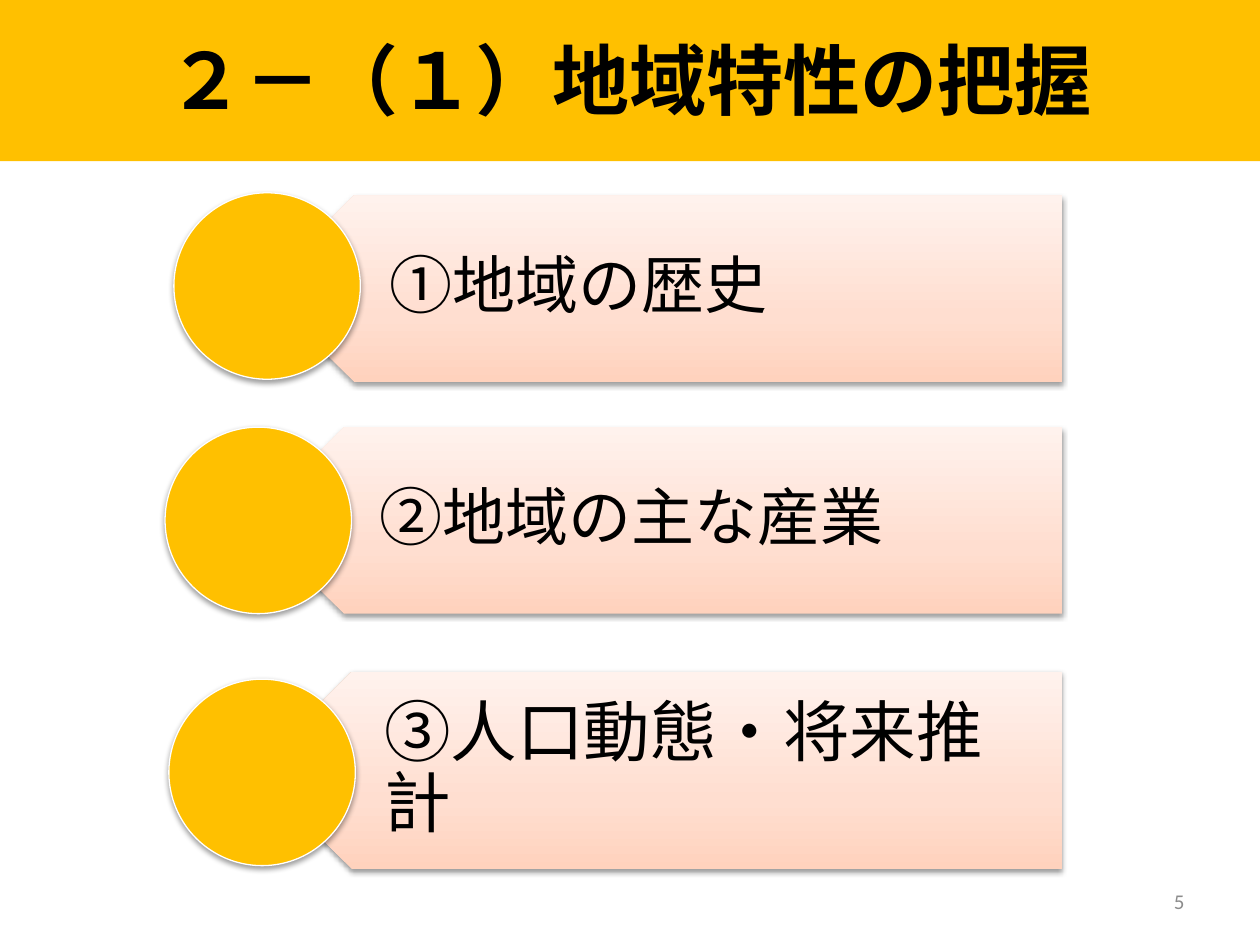
from lxml import etree
from pptx import Presentation
from pptx.dml.color import RGBColor
from pptx.enum import shapes, text
from pptx.oxml import parse_xml
from pptx.util import Inches, Pt

NS = 'xmlns:a="http://schemas.openxmlformats.org/drawingml/2006/main"'
GRADIENT = [(0, "FFD2BD"), (35, "FFDED0"), (100, "FFF2ED")]
STOPS = "".join(f'<a:gs pos="{pos * 1000}"><a:srgbClr val="{c}"/></a:gs>' for pos, c in GRADIENT)
GRAD_FILL = (f'<a:gradFill {NS} rotWithShape="0"><a:gsLst>{STOPS}</a:gsLst>'
             '<a:lin ang="16200000" scaled="0"/></a:gradFill>')
SHADOW = (f'<a:effectLst {NS}><a:outerShdw blurRad="40000" dist="20000" dir="5400000" rotWithShape="0">'
          '<a:srgbClr val="000000"><a:alpha val="38000"/></a:srgbClr></a:outerShdw></a:effectLst>')


def color(value):
    return RGBColor.from_string(value)


def write(sp, content, size, hue, align, bold=False, **frame):
    """Fill a shape with one formatted line; frame holds text frame settings."""
    tf = sp.text_frame
    settings = {"word_wrap": True, "auto_size": text.MSO_AUTO_SIZE.NONE,
                "vertical_anchor": text.MSO_ANCHOR.MIDDLE, **frame}
    for name, value in settings.items():
        setattr(tf, name, value)
    p = tf.paragraphs[0]
    p.alignment = align
    r = p.add_run()
    r.text = content
    for name, value in {"name": "Calibri", "size": Pt(size), "bold": bold}.items():
        setattr(r.font, name, value)
    r.font.color.rgb = color(hue)
    return p


prs = Presentation()
prs.slide_width, prs.slide_height = Inches(10), Inches(7.5)
s = prs.slides.add_slide(prs.slide_layouts[5])

# Title band
title = s.shapes.title
for name, value in {"left": 0, "top": -0.03, "width": 10, "height": 1.31}.items():
    setattr(title, name, Inches(value))
title.fill.solid()
title.fill.fore_color.rgb = color("FFC000")
write(title, "２－（１）地域特性の把握", 44, "000000", text.PP_ALIGN.CENTER, bold=True)

# Topic rows: label, size, arrow left, top, height, text left, circle left, circle top
right, diameter = 8.43, 1.48
rows = [
    ("①地域の歴史", 36, 2.07, 1.55, 1.48, 2.44, 1.38, 1.53),
    ("②地域の主な産業", 36, 1.99, 3.39, 1.48, 2.36, 1.31, 3.39),
    ("③人口動態・将来推計", 38, 2.01, 5.33, 1.57, 2.40, 1.34, 5.39),
]
for label, size, left, top, height, text_left, circle_left, circle_top in rows:
    arrow = s.shapes.add_shape(shapes.MSO_SHAPE.PENTAGON, Inches(left), Inches(top),
                               Inches(right - left), Inches(height))
    arrow.rotation = 180
    arrow.line.fill.background()
    arrow.line._ln.addprevious(parse_xml(GRAD_FILL))

    box = s.shapes.add_textbox(Inches(text_left), Inches(top),
                               Inches(right - text_left), Inches(height))
    p = write(box, label, size, "000000", text.PP_ALIGN.LEFT,
              margin_left=Inches(0.65), margin_right=Inches(0.28),
              margin_top=Inches(0.15), margin_bottom=Inches(0.15))
    p.line_spacing = 0.9

    circle = s.shapes.add_shape(shapes.MSO_SHAPE.OVAL, Inches(circle_left), Inches(circle_top),
                                Inches(diameter), Inches(diameter))
    circle.fill.solid()
    circle.fill.fore_color.rgb = color("FFC000")
    circle.line.color.rgb = color("FFFFFF")
    circle.line.width = Pt(0.75)

    for sp in (arrow, circle):
        sp._element.spPr.append(parse_xml(SHADOW))

# Page number
number = s.shapes.add_textbox(Inches(7.17), Inches(6.95), Inches(2.33), Inches(0.4))
write(number, "5", 12, "8C8C8C", text.PP_ALIGN.RIGHT)

prs.save("out.pptx")
